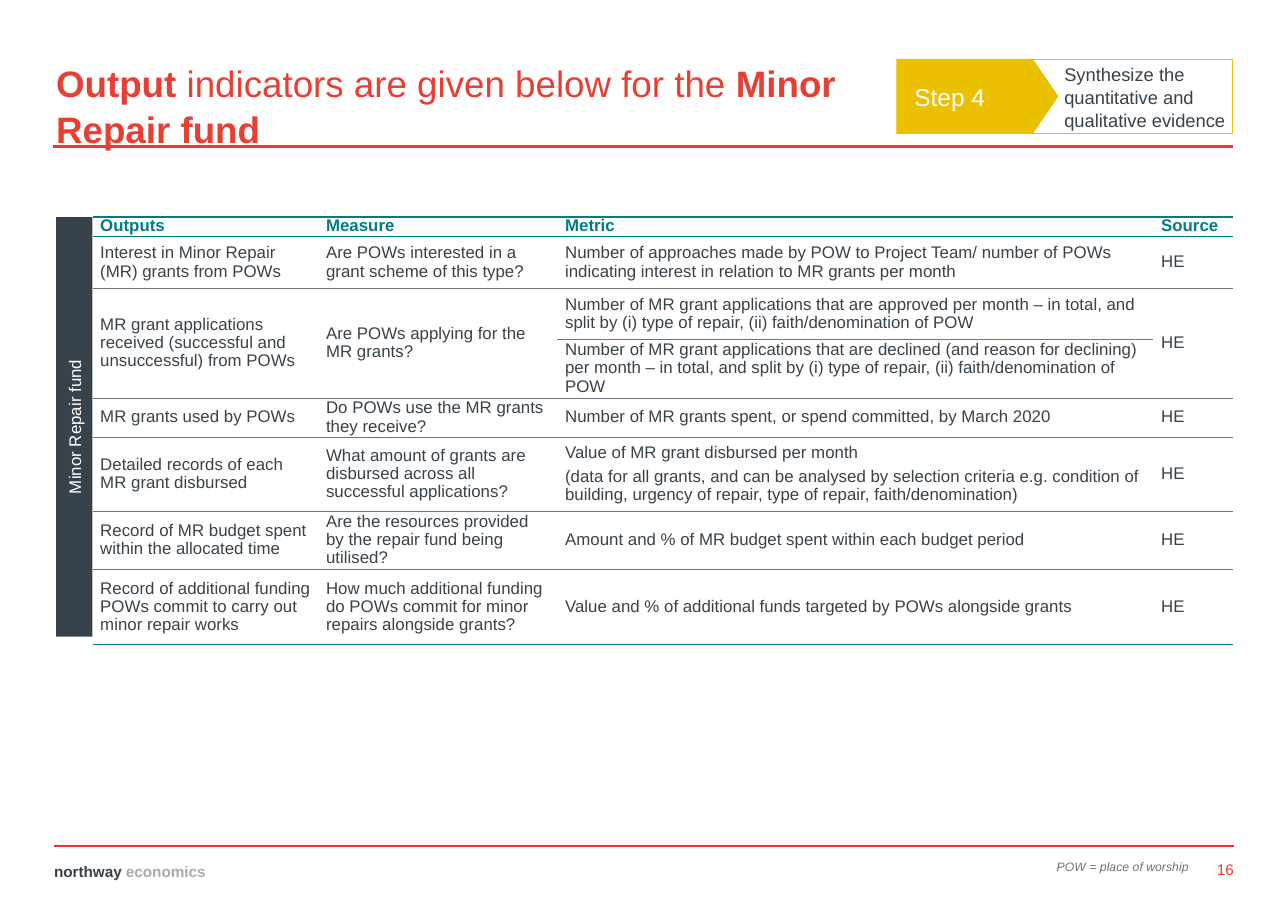
from lxml import etree
from pptx import Presentation
from pptx.dml.color import RGBColor
from pptx.enum import shapes, text
from pptx.oxml.ns import qn
from pptx.util import Inches, Pt

RED, TITLE_RED, TEAL, YELLOW = "E73A2F", "E83F35", "007B87", "EBC000"
DARK, GREY, LIGHT, WHITE = "37424A", "707276", "A9AAAD", "FFFFFF"
TOP, MIDDLE, BOTTOM = text.MSO_ANCHOR.TOP, text.MSO_ANCHOR.MIDDLE, text.MSO_ANCHOR.BOTTOM
LEFT, CENTER, RIGHT = text.PP_ALIGN.LEFT, text.PP_ALIGN.CENTER, text.PP_ALIGN.RIGHT


def rgb(code):
    return RGBColor.from_string(code)


def write(tf, paragraphs, size, anchor=TOP, align=LEFT, insets=(0, 0, 0, 0),
          wrap=True, line_spacing=1.0, gap=2, italic=False):
    """Fill a frame; each paragraph is a list of (wording, colour, bold) runs."""
    tf.word_wrap = wrap
    tf.vertical_anchor = anchor
    tf.margin_left, tf.margin_top, tf.margin_right, tf.margin_bottom = map(Inches, insets)
    for i, runs in enumerate(paragraphs):
        p = tf.add_paragraph() if i else tf.paragraphs[0]
        p.alignment = align
        p.line_spacing = line_spacing
        p.space_before = p.space_after = Pt(gap)
        for wording, colour, bold in runs:
            r = p.add_run()
            r.text = wording
            r.font.name, r.font.size = "Arial", Pt(size)
            r.font.bold, r.font.italic = bold, italic
            r.font.color.rgb = rgb(colour)


prs = Presentation()
prs.slide_width, prs.slide_height = Inches(11.69), Inches(8.27)
slide = prs.slides.add_slide(prs.slide_layouts[6])

# Rules under the title and above the footer
for x, y in [(0.49, 7.68), (0.48, 1.33)]:
    rule = slide.shapes.add_connector(shapes.MSO_CONNECTOR.STRAIGHT, Inches(x), Inches(y),
                                      Inches(x + 10.71), Inches(y))
    rule.line.color.rgb = rgb(RED)
    rule.line.width = Pt(1.5)
    etree.SubElement(rule._element.spPr, qn("a:effectLst"))

# Title and footer texts
title = [("Output ", TITLE_RED, True), ("indicators are given below for the ", TITLE_RED, False),
         ("Minor Repair fund", TITLE_RED, True)]
firm = [("northway ", DARK, True), ("economics", LIGHT, True)]
text_boxes = [
    ((10.9, 7.78, 0.3, 0.2), [("16", TITLE_RED, False)],
     dict(size=10, anchor=BOTTOM, align=RIGHT, wrap=False)),
    ((0.49, 7.79, 1.38, 0.2), firm, dict(size=10, anchor=BOTTOM, wrap=False)),
    ((0.51, 0.53, 7.63, 0.85), title, dict(size=24, anchor=MIDDLE, line_spacing=1.04, gap=0)),
    ((9.59, 7.8, 1.25, 0.16), [("POW = place of worship", GREY, False)],
     dict(size=8, italic=True)),
]
for box, runs, style in text_boxes:
    sp = slide.shapes.add_textbox(*map(Inches, box))
    write(sp.text_frame, [runs], **style)

# Fund label beside the table, and the step marker at top right
RECT, ARROW = shapes.MSO_SHAPE.RECTANGLE, shapes.MSO_SHAPE.PENTAGON
blocks = [
    (RECT, (0.51, 1.97, 0.33, 3.81), DARK, None, ("Minor Repair fund", WHITE, False),
     dict(size=11, align=CENTER, insets=(0.06, 0.06, 0.06, 0.06))),
    (RECT, (9.36, 0.54, 1.83, 0.67), WHITE, YELLOW,
     ("Synthesize the quantitative and qualitative evidence", DARK, False),
     dict(size=12, insets=(0.3, 0.06, 0.05, 0.06), line_spacing=1.04)),
    (ARROW, (8.14, 0.54, 1.46, 0.67), YELLOW, YELLOW, ("Step 4", WHITE, False),
     dict(size=16, insets=(0.16, 0.04, 0.04, 0.04), gap=0)),
]
for kind, box, fill, line, run, style in blocks:
    sp = slide.shapes.add_shape(kind, *map(Inches, box))
    sp.shadow.inherit = False
    sp.fill.solid()
    sp.fill.fore_color.rgb = rgb(fill)
    if line:
        sp.line.color.rgb = rgb(line)
        sp.line.width = Pt(0.75)
    else:
        sp.line.fill.background()
        sp.text_frame._txBody.bodyPr.set("vert", "vert270")
    if kind == ARROW:
        sp.adjustments[0] = 0.34
    write(sp.text_frame, [[run]], anchor=MIDDLE, **style)

# Indicator table; None marks a cell merged with the one above
rows = [
    ("Outputs", "Measure", "Metric", "Source"),
    ("Interest in Minor Repair (MR) grants from POWs",
     "Are POWs interested in a grant scheme of this type?",
     "Number of approaches made by POW to Project Team/ number of POWs indicating interest "
     "in relation to MR grants per month", "HE"),
    ("MR grant applications received (successful and unsuccessful) from POWs",
     "Are POWs applying for the MR grants?",
     "Number of MR grant applications that are approved per month – in total, and split by "
     "(i) type of repair, (ii) faith/denomination of POW", "HE"),
    (None, None,
     "Number of MR grant applications that are declined (and reason for declining) per month "
     "– in total, and split by (i) type of repair, (ii) faith/denomination of POW", None),
    ("MR grants used by POWs", "Do POWs use the MR grants they receive?",
     "Number of MR grants spent, or spend committed, by March 2020", "HE"),
    ("Detailed records of each MR grant disbursed",
     "What amount of grants are disbursed across all successful applications?",
     "Value of MR grant disbursed per month\n"
     "(data for all grants, and can be analysed by selection criteria e.g. condition of "
     "building, urgency of repair, type of repair, faith/denomination)", "HE"),
    ("Record of MR budget spent within the allocated time",
     "Are the resources provided by the repair fund being utilised?",
     "Amount and % of MR budget spent within each budget period", "HE"),
    ("Record of additional funding POWs commit to carry out minor repair works",
     "How much additional funding do POWs commit for minor repairs alongside grants?",
     "Value and % of additional funds targeted by POWs alongside grants", "HE"),
]
frame = slide.shapes.add_table(len(rows), 4, Inches(0.84), Inches(1.97), Inches(10.35), Inches(3.81))
table = frame.table
table.first_row = table.horz_banding = False
NO_STYLE = "{2D5ABB26-0587-4C30-8999-92F81FD0307C}"
table._tbl.tblPr.find(qn("a:tableStyleId")).text = NO_STYLE
for column, width in zip(table.columns, [2.05, 2.17, 5.41, 0.72]):
    column.width = Inches(width)
for row, height in zip(table.rows, [0.17, 0.47, 0.46, 0.51, 0.34, 0.67, 0.52, 0.68]):
    row.height = Inches(height)

last = len(rows) - 1
for i, row in enumerate(rows):
    edges = [("a:lnT", TEAL if i == 0 else GREY), ("a:lnB", TEAL if i in (0, last) else GREY)]
    for j, wording in enumerate(row):
        cell = table.cell(i, j)
        if wording is None:
            table.cell(i - 1, j).merge(cell)
            continue
        colour, bold = (TEAL, True) if i == 0 else (DARK, False)
        write(cell.text_frame, [[(part, colour, bold)] for part in wording.split("\n")],
              11, line_spacing=0.97)
        cell.vertical_anchor = MIDDLE if i else TOP
        cell.margin_left = cell.margin_right = Inches(0.07)
        cell.margin_top = cell.margin_bottom = 0
        cell.fill.solid()
        cell.fill.fore_color.rgb = rgb(WHITE)
        tcPr = cell._tc.get_or_add_tcPr()
        for k, (tag, edge_colour) in enumerate(edges):
            ln = etree.Element(qn(tag), w=str(Pt(1 if edge_colour == TEAL else 0.5)))
            solid = etree.SubElement(ln, qn("a:solidFill"))
            etree.SubElement(solid, qn("a:srgbClr"), val=edge_colour)
            tcPr.insert(k, ln)

prs.save("out.pptx")
